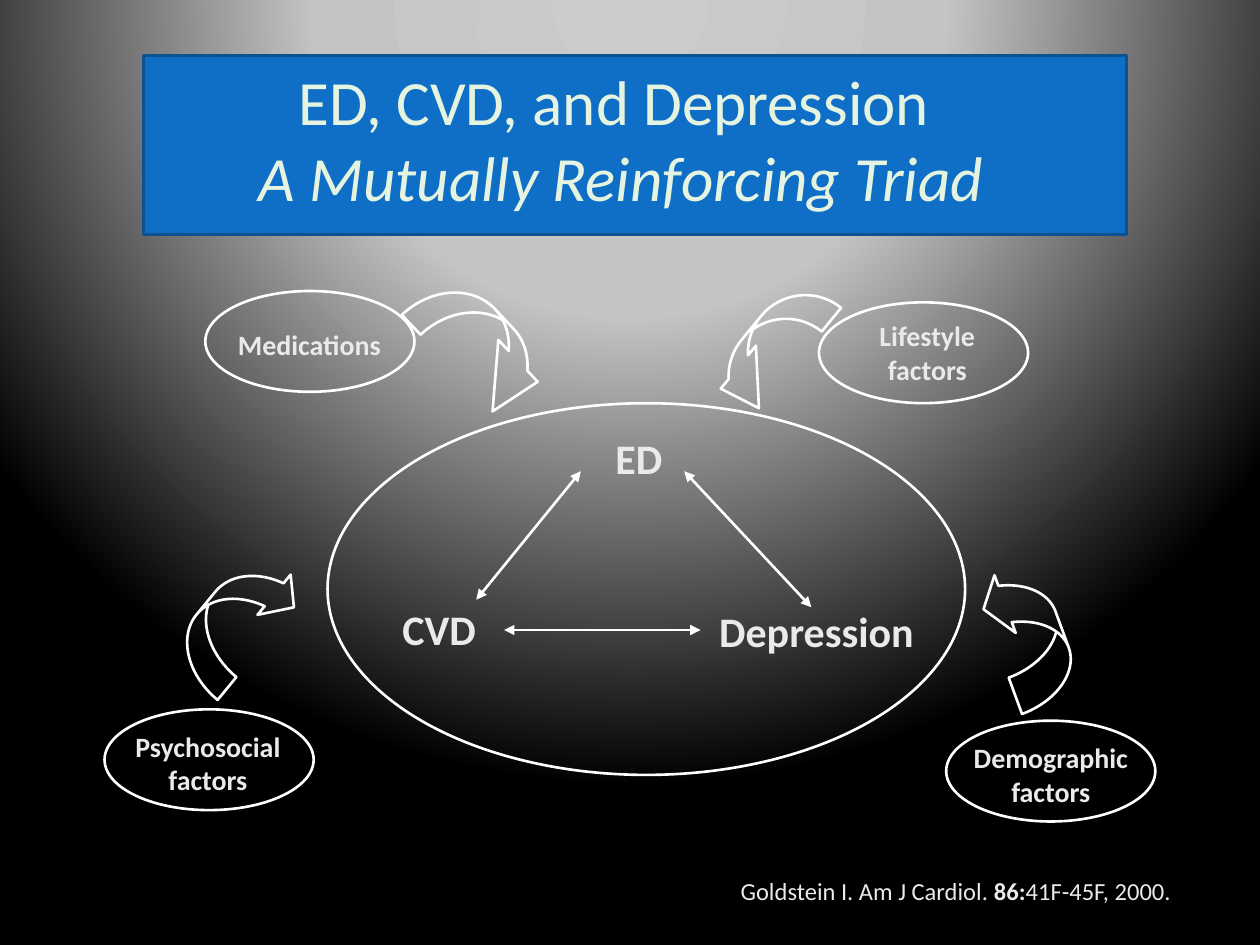
from lxml import etree
from pptx import Presentation
from pptx import util as u
from pptx.dml import color
from pptx.enum import shapes, text
from pptx.oxml import ns, xmlchemy

WHITE, GREY, MINT = "FFFFFF", "EAEAEA", "E5F4E0"
BLUE, NAVY = "0F6FC6", "0B5292"
SHAPE = shapes.MSO_SHAPE


def rgb(value):
    return color.RGBColor.from_string(value)


def add_node(parent, tag, **attrs):
    node = etree.SubElement(parent, ns.qn(tag))
    for name, value in attrs.items():
        node.set(name, str(value))
    return node


class Deck:
    font = "Calibri"
    line_width = 1.5

    def __init__(self, width, height):
        self.prs = Presentation()
        self.prs.slide_width = u.Inches(width)
        self.prs.slide_height = u.Inches(height)
        self.s = self.prs.slides.add_slide(self.prs.slide_layouts[6])

    def background(self, stops, focus):
        self.s.background.fill.solid()
        bg_pr = self.s.background._cSld.bg.bgPr
        bg_pr.remove(bg_pr.find(ns.qn("a:solidFill")))
        grad = etree.Element(ns.qn("a:gradFill"), rotWithShape="1")
        bg_pr.insert(0, grad)
        stop_list = add_node(grad, "a:gsLst")
        for pos, value in stops:
            stop = add_node(stop_list, "a:gs", pos=pos * 1000)
            add_node(stop, "a:srgbClr", val=value)
        path_node = add_node(grad, "a:path", path="circle")
        rect = {side: pct * 1000 for side, pct in zip("ltrb", focus)}
        add_node(path_node, "a:fillToRect", **rect)

    def shape(self, kind, at, fill=None, line=WHITE, width=line_width):
        sp = self.s.shapes.add_shape(kind, *map(u.Inches, at))
        sp.shadow.inherit = False
        if fill:
            sp.fill.solid()
            sp.fill.fore_color.rgb = rgb(fill)
        else:
            sp.fill.background()
        sp.line.color.rgb = rgb(line)
        sp.line.width = u.Pt(width)
        return sp

    def curved_arrow(self, at, rotation, adjustments, flip=None):
        sp = self.shape(SHAPE.CURVED_RIGHT_ARROW, at)
        sp.rotation = rotation
        for i, value in enumerate(adjustments):
            sp.adjustments[i] = value
        if flip:
            sp._element.spPr.find(ns.qn("a:xfrm")).set(flip, "1")

    def double_arrow(self, start, end):
        cn = self.s.shapes.add_connector(
            shapes.MSO_CONNECTOR.STRAIGHT, *map(u.Inches, start + end))
        cn.line.color.rgb = rgb(WHITE)
        cn.line.width = u.Pt(self.line_width)
        ln = cn.line._get_or_add_ln()
        for tag in ("a:headEnd", "a:tailEnd"):
            add_node(ln, tag, type="triangle")
        add_node(cn._element.spPr, "a:effectLst")

    def text(self, at, lines, size, ink=GREY, align="CENTER", anchor="TOP",
             spacing=None, breaks=False, **style):
        tf = self.s.shapes.add_textbox(*map(u.Inches, at)).text_frame
        tf.word_wrap = True
        tf.vertical_anchor = getattr(text.MSO_ANCHOR, anchor)
        p = tf.paragraphs[0]
        for i, runs in enumerate(lines):
            if i and breaks:
                p.add_line_break()
            elif i:
                p = tf.add_paragraph()
            p.alignment = getattr(text.PP_ALIGN, align)
            if spacing:
                p.line_spacing = spacing
            for words, extra in runs:
                r = p.add_run()
                r.text = words
                fmt = {"name": self.font, "size": u.Pt(size), **style, **extra}
                for name, value in fmt.items():
                    setattr(r.font, name, value)
                r.font.color.rgb = rgb(ink)

    def label(self, at, words, size, spacing=None):
        lines = [[(line, {})] for line in words.split("\n")]
        self.text(at, lines, size, spacing=spacing, bold=True)


def main():
    deck = Deck(10, 7.5)
    deck.background([(0, "CCCCCC"), (40, "C4C4C4"), (100, "000000")],
                    (50, -80, 50, 180))
    deck.shape(SHAPE.RECTANGLE, (1.14, 0.44, 7.8, 1.42), BLUE, NAVY, 2)

    deck.label((4.74, 3.38, 0.66, 0.5), "ED", 24)
    deck.label((3.03, 4.85, 0.91, 0.39), "CVD", 24, spacing=0.7)
    deck.label((5.47, 4.76, 2.02, 0.5), "Depression", 24)
    for start, end in [((3.78, 4.76), (4.61, 3.74)),
                       ((5.43, 3.74), (6.44, 4.82)),
                       ((4, 5), (5.56, 5))]:
        deck.double_arrow(start, end)
    deck.shape(SHAPE.OVAL, (2.6, 3.2, 5.06, 2.95))

    factors = [
        ((1.63, 2.31), (1.71, 2.55, 1.49, 0.37), "Medications"),
        ((6.5, 2.4), (6.81, 2.48, 1.1, 0.64), "Lifestyle\nfactors"),
        ((0.83, 5.63), (0.84, 5.74, 1.62, 0.64), "Psychosocial\nfactors"),
        ((7.51, 5.72), (7.53, 5.83, 1.62, 0.64), "Demographic\nfactors"),
    ]
    for corner, label_at, words in factors:
        deck.shape(SHAPE.OVAL, corner + (1.66, 0.8))
        deck.label(label_at, words, 16)

    arrows = [
        ((5.88, 2.16, 0.45, 1.25), 39.3, (0.54, 0.98, 0.74), None),
        ((7.9, 4.48, 0.53, 1.13), 159.8, (0.58, 0.92, 0.33), None),
        ((3.55, 2.13, 0.57, 1.28), 316.8, (0.38, 0.8, 0.74), "flipH"),
        ((1.6, 4.35, 0.56, 1.16), 39.5, (0.42, 0.74, 0.33), "flipV"),
    ]
    for arrow in arrows:
        deck.curved_arrow(*arrow)

    deck.text((5.78, 6.9, 4.06, 0.33),
              [[("Goldstein I. Am J Cardiol.", {}), (" 86:", {"bold": True}),
                ("41F-45F, 2000.", {})]], 14, align="LEFT")
    deck.text((0.57, 0.47, 8.72, 1.26),
              [[("ED, CVD, and Depression ", {})],
               [("A Mutually Reinforcing Triad", {"italic": True})]],
              36, MINT, anchor="MIDDLE", breaks=True)
    deck.prs.save("out.pptx")


if __name__ == "__main__":
    main()
